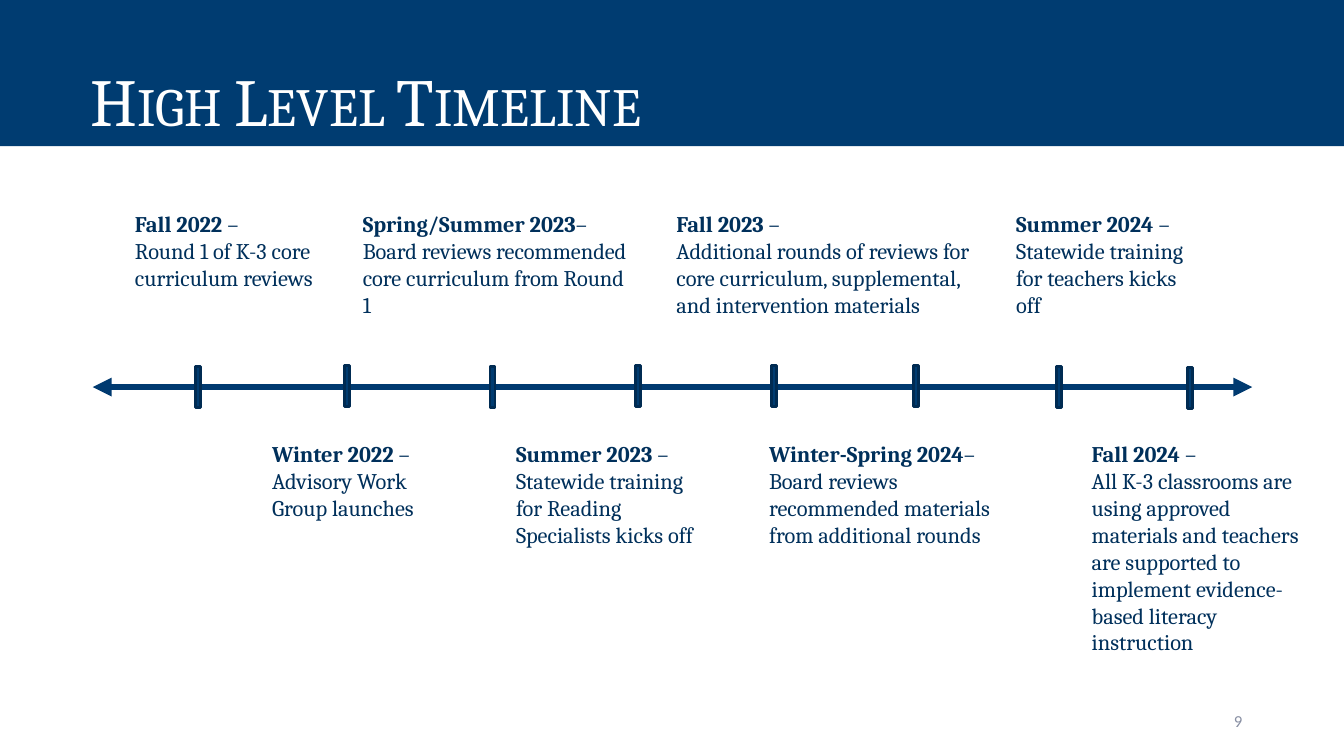
"""Build a slide with a two-sided timeline of curriculum milestones."""
from lxml import etree
from pptx import Presentation
from pptx import util as u
from pptx.dml.color import RGBColor
from pptx.enum import shapes, text
from pptx.oxml.ns import qn

NAVY = RGBColor(0x00, 0x3C, 0x71)
AXIS = RGBColor(0x00, 0x3A, 0x70)
EDGE = RGBColor(0x00, 0x2B, 0x52)
INK = RGBColor(0x00, 0x30, 0x5B)
GRAY = RGBColor(0x88, 0x8F, 0xA3)
WHITE = RGBColor(0xFF, 0xFF, 0xFF)

UPPER, LOWER = 2.04, 4.32
NOTES = [
    (1.24, UPPER, 2.01, 1.18, "Fall 2022", " – \nRound 1 of K-3 core curriculum reviews"),
    (2.6, LOWER, 1.95, 0.91, "Winter 2022", " – Advisory Work Group launches"),
    (3.5, UPPER, 2.86, 1.45, "Spring/Summer 2023",
     "– Board reviews recommended core curriculum from Round 1"),
    (5.02, LOWER, 2.04, 1.45, "Summer 2023",
     " – Statewide training for Reading Specialists kicks off"),
    (6.61, UPPER, 3.11, 1.45, "Fall 2023",
     " – \nAdditional rounds of reviews for core curriculum, "
     "supplemental, and intervention materials"),
    (7.53, LOWER, 2.73, 1.18, "Winter-Spring 2024",
     "– Board reviews recommended materials from additional rounds"),
    (9.98, UPPER, 2.05, 1.18, "Summer 2024",
     " – Statewide training for teachers kicks off"),
    (10.73, LOWER, 2.37, 2.52, "Fall 2024",
     " – \nAll K-3 classrooms are using approved materials and teachers "
     "are supported to implement evidence-based literacy instruction"),
]
TICKS = [(1.94, 3.64), (3.42, 3.63), (4.86, 3.64), (6.3, 3.63),
         (7.65, 3.63), (9.06, 3.63), (10.48, 3.64), (11.78, 3.65)]


def write(para, words, font="Cambria", size=16, color=INK, bold=False, small=False):
    run = para.add_run()
    run.text = words
    run.font.name = font
    run.font.size = u.Pt(size)
    run.font.color.rgb = color
    run.font.bold = bold
    if small:
        run.font._element.set("cap", "small")


class Deck:
    def __init__(self):
        self.show = Presentation()
        self.show.slide_width = u.Inches(13.33)
        self.show.slide_height = u.Inches(7.5)
        self.slide = self.show.slides.add_slide(self.show.slide_layouts[5])

    def title(self, words):
        head = self.slide.shapes.title
        head.left = head.top = 0
        head.width, head.height = self.show.slide_width, u.Inches(1.45)
        head.fill.solid()
        head.fill.fore_color.rgb = NAVY
        frame = head.text_frame
        frame.auto_size = text.MSO_AUTO_SIZE.NONE
        frame.vertical_anchor = text.MSO_ANCHOR.BOTTOM
        frame.margin_left = u.Inches(0.9)
        para = frame.paragraphs[0]
        para.alignment = text.PP_ALIGN.LEFT
        para.line_spacing = 0.9
        write(para, words, size=48, color=WHITE, small=True)

    def box(self, left, top, width, height):
        area = self.slide.shapes.add_textbox(*map(u.Inches, (left, top, width, height)))
        area.text_frame.word_wrap = True
        return area.text_frame

    def note(self, left, top, width, height, date, rest):
        frame = self.box(left, top, width, height)
        frame.auto_size = text.MSO_AUTO_SIZE.SHAPE_TO_FIT_TEXT
        first, *more = rest.split("\n")
        para = frame.paragraphs[0]
        write(para, date, bold=True)
        write(para, first)
        for line in more:
            write(frame.add_paragraph(), line)

    def number(self, words):
        frame = self.box(9.42, 6.95, 3, 0.4)
        frame.vertical_anchor = text.MSO_ANCHOR.MIDDLE
        frame.paragraphs[0].alignment = text.PP_ALIGN.RIGHT
        write(frame.paragraphs[0], words, font="Calibri", size=12, color=GRAY)

    def axis(self, left, right, level):
        line = self.slide.shapes.add_connector(
            shapes.MSO_CONNECTOR.STRAIGHT, *map(u.Inches, (left, level, right, level)))
        line.line.color.rgb = AXIS
        line.line.width = u.Pt(4.5)
        props = line._element.spPr
        for end in ("a:headEnd", "a:tailEnd"):
            etree.SubElement(props.find(qn("a:ln")), qn(end), type="triangle")
        etree.SubElement(props, qn("a:effectLst"))

    def tick(self, left, top):
        mark = self.slide.shapes.add_shape(
            shapes.MSO_SHAPE.RECTANGLE, *map(u.Inches, (left, top, 0.05, 0.4)))
        mark.shadow.inherit = False
        mark.fill.solid()
        mark.fill.fore_color.rgb = NAVY
        mark.line.color.rgb = EDGE
        mark.line.width = u.Pt(2)


def main():
    deck = Deck()
    deck.title("High Level Timeline")
    deck.number("9")
    deck.axis(0.92, 12.42, 3.84)
    for tick in TICKS:
        deck.tick(*tick)
    for note in NOTES:
        deck.note(*note)
    deck.show.save("out.pptx")


if __name__ == "__main__":
    main()
